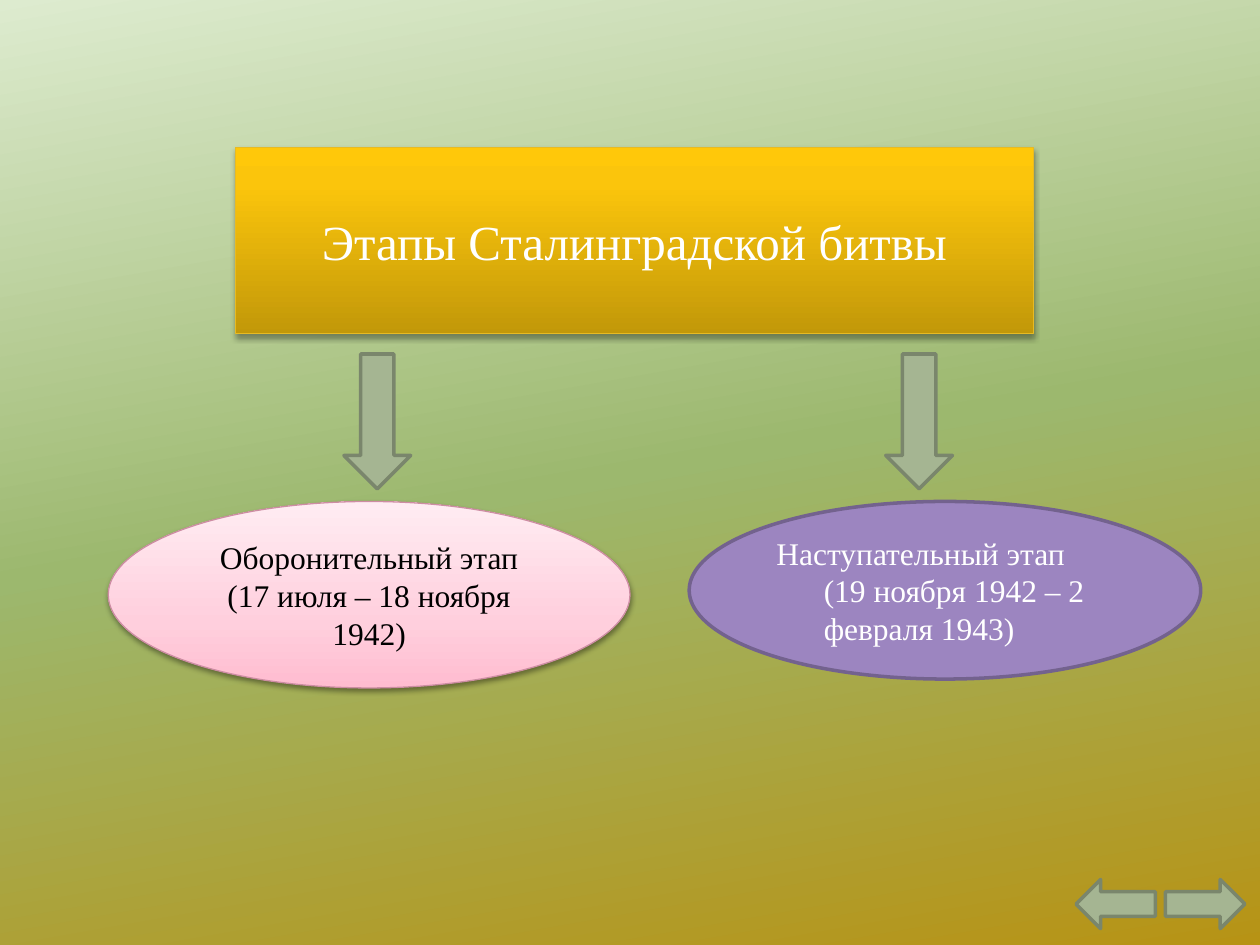
from lxml.etree import SubElement
from pptx import Presentation
from pptx.dml.color import RGBColor
from pptx.enum.shapes import MSO_SHAPE as Shape
from pptx.enum.text import MSO_ANCHOR as Anchor, PP_ALIGN as Align
from pptx.oxml.ns import qn
from pptx.util import Pt

WHITE = RGBColor(0xFF, 0xFF, 0xFF)
BLACK = RGBColor(0, 0, 0)
SAGE = RGBColor(0xA5, 0xB5, 0x92)
SAGE_DARK = RGBColor(0x7A, 0x86, 0x6C)
GOLD_LINE = RGBColor(0xE7, 0xBA, 0x23)
PINK_LINE = RGBColor(0xCD, 0x8D, 0xA3)
PURPLE = RGBColor(0x9C, 0x85, 0xC0)
PURPLE_DARK = RGBColor(0x73, 0x62, 0x8E)
FONT = "Times New Roman"

MEADOW = [(0, RGBColor(0xDD, 0xEB, 0xCF)), (50, RGBColor(0x9C, 0xB8, 0x6E)),
          (100, RGBColor(0xB7, 0x93, 0x15))]
GOLD = [(0, RGBColor(0xC2, 0x98, 0x09)), (80, RGBColor(0xFB, 0xC5, 0x0C)),
        (100, RGBColor(0xFF, 0xC8, 0x0A))]
PINK = [(0, RGBColor(0xFF, 0xBC, 0xD0)), (35, RGBColor(0xFF, 0xCF, 0xDD)),
        (100, RGBColor(0xFF, 0xEC, 0xF2))]

TITLE = "Этапы Сталинградской битвы"
DEFENCE = ["Оборонительный этап", "(17 июля – 18 ноября 1942)"]
OFFENSIVE = ["Наступательный этап (19 ноября 1942 – 2 февраля 1943)"]

TITLE_AREA = (134.64, 84.24, 455.76, 106.56)
DEFENCE_AREA = (61.92, 286.56, 298.08, 106.56)
OFFENSIVE_AREA = (393.84, 286.56, 292.32, 101.52)
ARROWS = [
    (Shape.DOWN_ARROW, (196.56, 202.32, 38.16, 77.04)),
    (Shape.DOWN_ARROW, (506.16, 202.32, 38.16, 77.04)),
    (Shape.LEFT_ARROW, (614.88, 502.56, 45.36, 28.08)),
    (Shape.RIGHT_ARROW, (666, 502.56, 45.36, 28.08)),
]


def set_gradient(fill, element, stops, angle):
    fill.gradient()
    fill.gradient_angle = angle
    stop_list = element.find(".//" + qn("a:gsLst"))
    for stop in list(stop_list):
        stop_list.remove(stop)
    for position, color in stops:
        stop = SubElement(stop_list, qn("a:gs"), pos=str(position * 1000))
        SubElement(stop, qn("a:srgbClr"), val=str(color))


def set_line(shape, color, width):
    shape.line.color.rgb = color
    shape.line.width = Pt(width)


def add_shadow(shape, opacity, distance):
    shape.shadow.inherit = False
    effects = shape.element.spPr.find(qn("a:effectLst"))
    shadow = SubElement(effects, qn("a:outerShdw"), blurRad=str(Pt(3.1)),
                        dist=str(Pt(distance)), dir="5400000", rotWithShape="0")
    color = SubElement(shadow, qn("a:srgbClr"), val="000000")
    SubElement(color, qn("a:alpha"), val=str(opacity * 1000))


def add_shape(page, kind, area):
    shape = page.shapes.add_shape(kind, *map(Pt, area))
    shape.shadow.inherit = False
    return shape


def write(shape, lines, size, color, align):
    frame = shape.text_frame
    frame.word_wrap = True
    frame.vertical_anchor = Anchor.MIDDLE
    frame.text = "\n".join(lines)
    for para in frame.paragraphs:
        para.alignment = align
        para.font.name = FONT
        para.font.size = Pt(size)
        para.font.color.rgb = color


def main():
    deck = Presentation()
    deck.slide_width, deck.slide_height = Pt(720), Pt(540)
    page = deck.slides.add_slide(deck.slide_layouts[5])
    set_gradient(page.background.fill, page.element, MEADOW, 280)

    title = page.shapes.title
    title.left, title.top, title.width, title.height = map(Pt, TITLE_AREA)
    outline = SubElement(title.element.spPr, qn("a:prstGeom"), prst="roundRect")
    SubElement(outline, qn("a:avLst"))
    set_gradient(title.fill, title.element, GOLD, 90)
    set_line(title, GOLD_LINE, 0.75)
    add_shadow(title, 35, 1.8)
    write(title, [TITLE], 28, WHITE, Align.CENTER)

    for kind, area in ARROWS:
        arrow = add_shape(page, kind, area)
        arrow.fill.solid()
        arrow.fill.fore_color.rgb = SAGE
        set_line(arrow, SAGE_DARK, 2)

    defence = add_shape(page, Shape.OVAL, DEFENCE_AREA)
    set_gradient(defence.fill, defence.element, PINK, 90)
    set_line(defence, PINK_LINE, 0.75)
    add_shadow(defence, 38, 1.6)
    write(defence, DEFENCE, 18, BLACK, Align.CENTER)

    offensive = add_shape(page, Shape.OVAL, OFFENSIVE_AREA)
    offensive.fill.solid()
    offensive.fill.fore_color.rgb = PURPLE
    set_line(offensive, PURPLE_DARK, 2)
    write(offensive, OFFENSIVE, 18, WHITE, Align.LEFT)
    para = offensive.text_frame.paragraphs[0]
    para.space_before = Pt(3.6)
    hanging = para._p.get_or_add_pPr()
    hanging.set("marL", str(Pt(27)))
    hanging.set("indent", str(-Pt(27)))

    deck.save("out.pptx")


if __name__ == "__main__":
    main()
